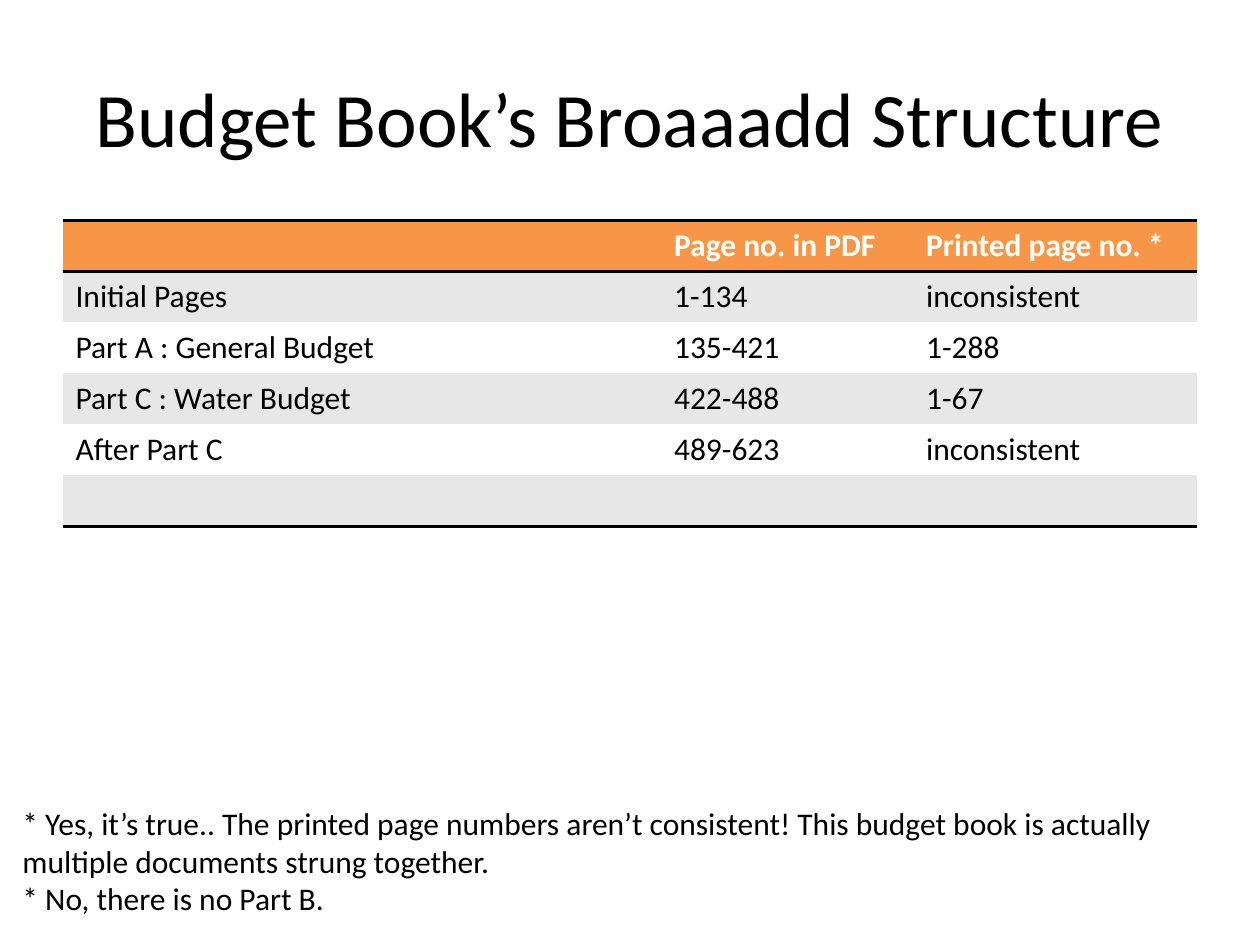
from lxml import etree
from pptx import Presentation, util as u
from pptx.dml.color import RGBColor
from pptx.enum import text
from pptx.oxml.ns import qn

COLORS = {"ink": "000000", "white": "FFFFFF", "header": "F79646", "band": "E7E7E7"}
NO_STYLE = "{2D5ABB26-0587-4C30-8999-92F81FD0307C}"


def format_text(p, color="ink", **values):
    for name, value in {"name": "Calibri", "size": u.Pt(18), **values}.items():
        setattr(p.font, name, value)
    p.font.color.rgb = RGBColor.from_string(COLORS[color])


def add_border(cell, side, index):
    ln = etree.Element(qn(f"a:{side}"), w=str(u.Pt(2)))
    fill = etree.SubElement(ln, qn("a:solidFill"))
    etree.SubElement(fill, qn("a:srgbClr"), val=COLORS["ink"])
    cell._tc.get_or_add_tcPr().insert(index, ln)


prs = Presentation()
prs.slide_width, prs.slide_height = u.Inches(10), u.Inches(7.5)
s = prs.slides.add_slide(prs.slide_layouts[6])

# Title
sp = s.shapes.add_textbox(u.Inches(0.5), u.Inches(0.3), u.Inches(9), u.Inches(1.25))
tf = sp.text_frame
tf.word_wrap = True
tf.vertical_anchor = text.MSO_ANCHOR.MIDDLE
p = tf.paragraphs[0]
p.text = "Budget Book’s Broaaadd Structure"
p.alignment = text.PP_ALIGN.CENTER
format_text(p, size=u.Pt(44))

# Page number table
rows = [
    ("", "Page no. in PDF", "Printed page no. *"),
    ("Initial Pages", "1-134", "inconsistent"),
    ("Part A : General Budget", "135-421", "1-288"),
    ("Part C : Water Budget", "422-488", "1-67"),
    ("After Part C", "489-623", "inconsistent"),
    ("", "", ""),
]
sp = s.shapes.add_table(len(rows), 3, u.Inches(0.5), u.Inches(1.75),
                        u.Inches(9), u.Inches(2.43))
table = sp.table
table._tbl.tblPr.find(qn("a:tableStyleId")).text = NO_STYLE
for column, width in zip(table.columns, (4.75, 2, 2.25)):
    column.width = u.Inches(width)

for i, row in enumerate(rows):
    header = i == 0
    fill = "header" if header else "band" if i % 2 else "white"
    for j, label in enumerate(row):
        cell = table.cell(i, j)
        cell.fill.solid()
        cell.fill.fore_color.rgb = RGBColor.from_string(COLORS[fill])
        sides = ["lnT", "lnB"] if header else ["lnB"] if i == len(rows) - 1 else []
        for index, side in enumerate(sides):
            add_border(cell, side, index)
        p = cell.text_frame.paragraphs[0]
        p.text = label
        format_text(p, "white" if header else "ink", bold=header)

# Footnotes
notes = [
    "* Yes, it’s true.. The printed page numbers aren’t consistent! "
    "This budget book is actually multiple documents strung together.",
    "* No, there is no Part B.",
]
sp = s.shapes.add_textbox(u.Inches(0.08), u.Inches(6.33), u.Inches(9.75), u.Inches(1.01))
tf = sp.text_frame
tf.word_wrap = True
tf.auto_size = text.MSO_AUTO_SIZE.SHAPE_TO_FIT_TEXT
for i, note in enumerate(notes):
    p = tf.add_paragraph() if i else tf.paragraphs[0]
    p.text = note
    format_text(p)

prs.save("out.pptx")
